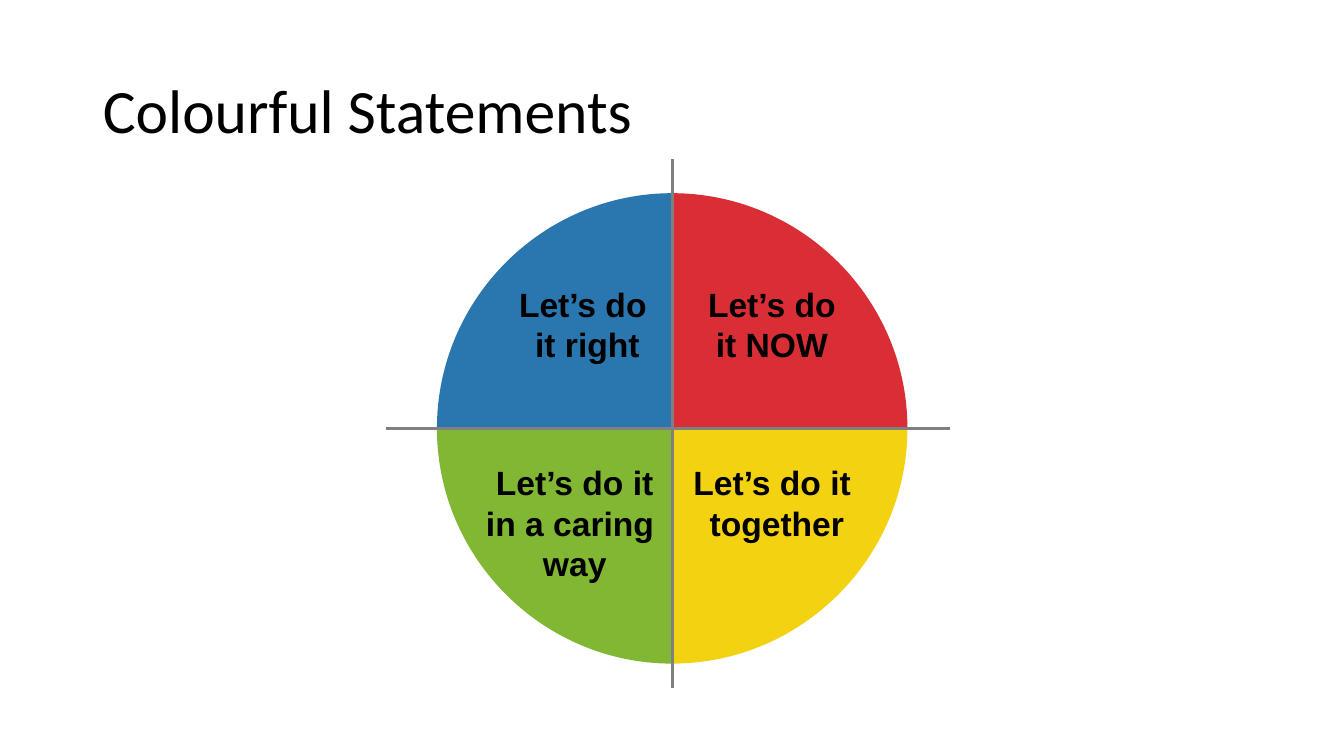
from lxml.etree import SubElement
from pptx import Presentation
from pptx.dml.color import RGBColor
from pptx.enum.shapes import MSO_CONNECTOR
from pptx.enum.text import MSO_ANCHOR, MSO_AUTO_SIZE, PP_ALIGN
from pptx.oxml.ns import qn
from pptx.util import Inches, Pt

TITLE = "Colourful Statements"
CENTER_X, CENTER_Y, RADIUS = 20 / 3, 4.25, 7 / 3
CURVE = 0.55
QUADRANTS = [
    (1, -1, "DA2E37"),
    (-1, -1, "2A76AE"),
    (1, 1, "F3D211"),
    (-1, 1, "81B733"),
]
AXES = [
    (CENTER_X, 1.58, CENTER_X, 6.83),
    (3.83, CENTER_Y, 9.42, CENTER_Y),
]
STATEMENTS = [
    (["Let’s do ", "it NOW"], 6.91, 2.76, 1.49, 0.91, True),
    (["Let’s do it ", "together"], 6.77, 4.53, 1.87, 0.91, False),
    (["Let’s do it", "in a caring ", "way"], 4.71, 4.53, 1.98, 1.31, False),
    (["Let’s do", " it right"], 5.04, 2.76, 1.48, 0.91, False),
]


def color(value):
    return RGBColor.from_string(value)


def style_font(paragraph, name, size, bold):
    paragraph.font.name = name
    paragraph.font.size = Pt(size)
    paragraph.font.bold = bold
    paragraph.font.color.rgb = color("000000")


def add_title(page):
    title = page.shapes.title
    title.left, title.top = Inches(0.92), Inches(0.4)
    title.width, title.height = Inches(11.5), Inches(1.45)
    title.text_frame.text = TITLE
    title.text_frame.vertical_anchor = MSO_ANCHOR.MIDDLE
    paragraph = title.text_frame.paragraphs[0]
    paragraph.alignment = PP_ALIGN.LEFT
    paragraph.line_spacing = 0.9
    style_font(paragraph, "Calibri", 44, False)


def round_first_edge(shape, controls):
    edge = shape.element.find(".//" + qn("a:lnTo"))
    curve = SubElement(edge.getparent(), qn("a:cubicBezTo"))
    for x, y in controls:
        point = SubElement(curve, qn("a:pt"))
        point.set("x", str(x - shape.left))
        point.set("y", str(y - shape.top))
    curve.append(edge[0])
    edge.getparent().replace(edge, curve)


def add_quadrant(page, side_x, side_y, fill):
    def spot(across, down):
        return (
            Inches(CENTER_X + side_x * RADIUS * across),
            Inches(CENTER_Y + side_y * RADIUS * down),
        )

    builder = page.shapes.build_freeform(*spot(0, 1))
    builder.add_line_segments([spot(1, 0), spot(0, 0)], close=True)
    quadrant = builder.convert_to_shape()
    round_first_edge(quadrant, [spot(CURVE, 1), spot(1, CURVE)])
    quadrant.shadow.inherit = False
    quadrant.fill.solid()
    quadrant.fill.fore_color.rgb = color(fill)
    quadrant.line.fill.background()


def add_axis(page, ends):
    axis = page.shapes.add_connector(MSO_CONNECTOR.STRAIGHT, *map(Inches, ends))
    axis.line.color.rgb = color("808080")
    axis.line.width = Pt(2.25)
    SubElement(axis.element.spPr, qn("a:effectLst"))


def add_statement(page, lines, left, top, width, height, wrap):
    box = page.shapes.add_textbox(*map(Inches, (left, top, width, height)))
    frame = box.text_frame
    frame.word_wrap = wrap
    frame.auto_size = MSO_AUTO_SIZE.SHAPE_TO_FIT_TEXT
    frame.vertical_anchor = MSO_ANCHOR.MIDDLE
    frame.text = "\n".join(lines)
    for paragraph in frame.paragraphs:
        paragraph.alignment = PP_ALIGN.CENTER
        style_font(paragraph, "Arial", 24, True)


def main():
    deck = Presentation()
    deck.slide_width, deck.slide_height = Inches(13.33), Inches(7.5)
    page = deck.slides.add_slide(deck.slide_layouts[5])
    add_title(page)
    for quadrant in QUADRANTS:
        add_quadrant(page, *quadrant)
    for axis in AXES:
        add_axis(page, axis)
    for statement in STATEMENTS:
        add_statement(page, *statement)
    deck.save("out.pptx")


if __name__ == "__main__":
    main()
